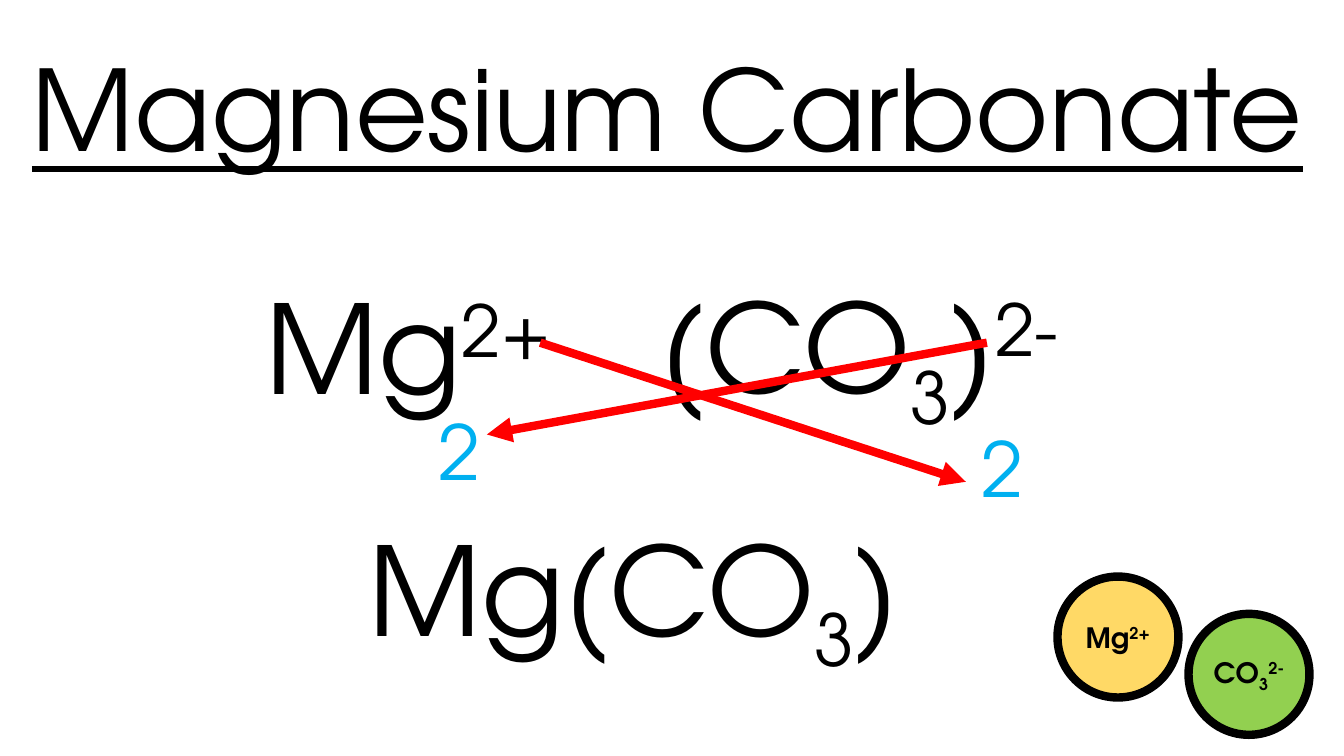
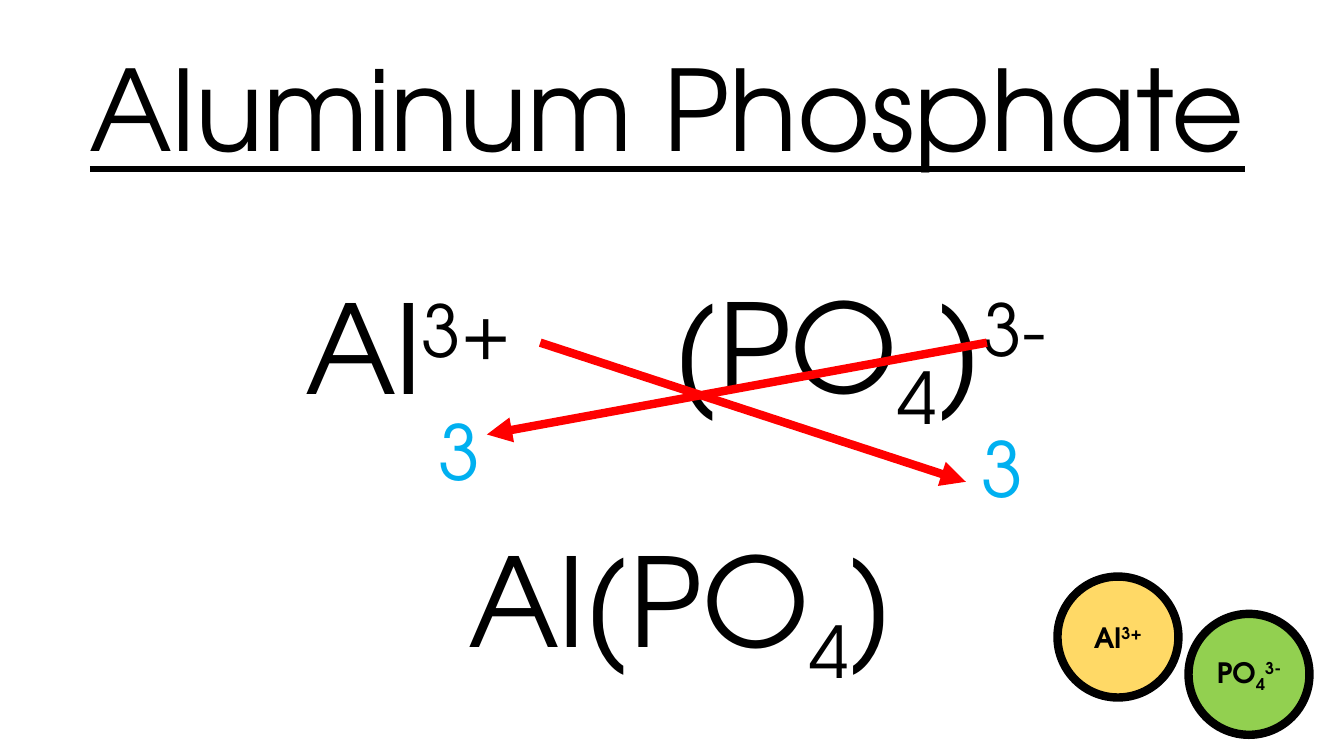
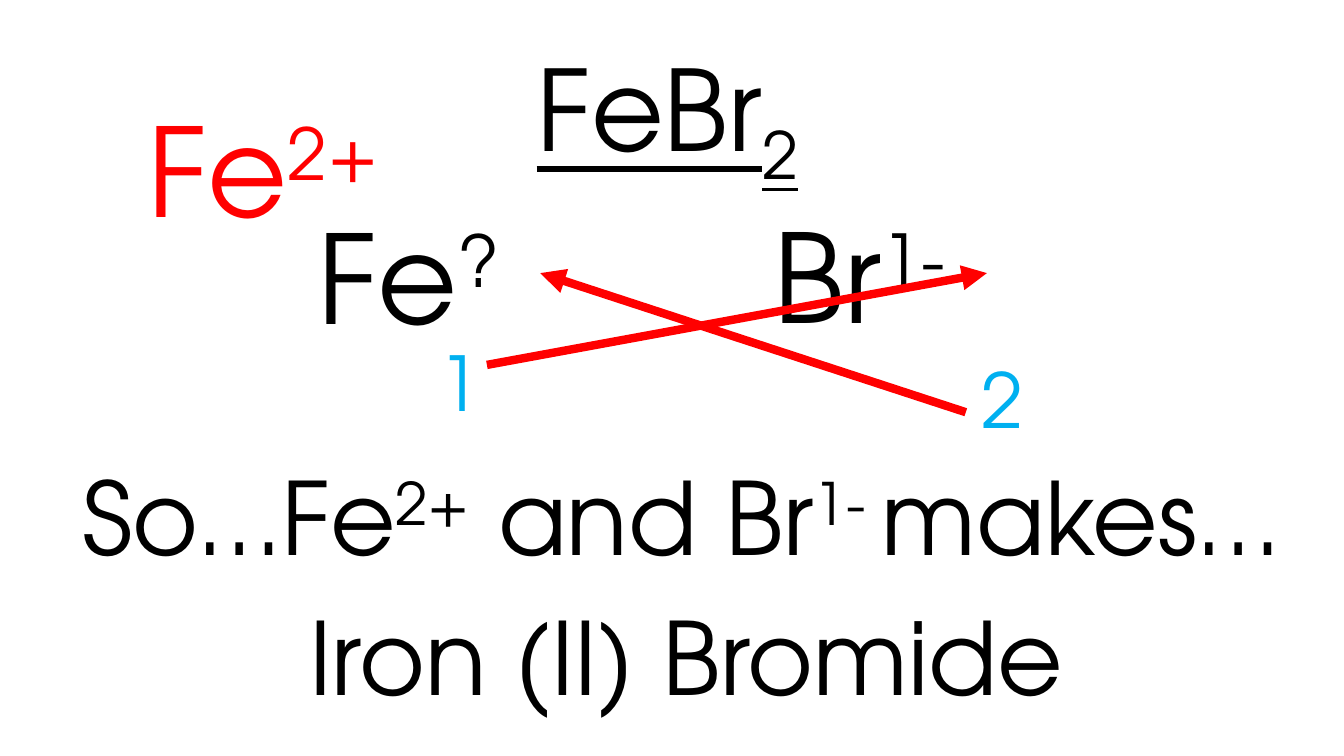
from lxml.etree import SubElement
from pptx import Presentation
from pptx.dml.color import RGBColor
from pptx.enum.shapes import MSO_CONNECTOR as CONN, MSO_SHAPE as SHAPE
from pptx.enum.text import MSO_ANCHOR as ANCHOR, MSO_AUTO_SIZE as AUTO, PP_ALIGN as ALIGN
from pptx.oxml.ns import qn
from pptx.util import Inches, Pt

FONT = "TeX Gyre Adventor"
COLORS = {"ink": "000000", "arrow": "FF0000", "count": "00B0F0",
          "cation": "FFD966", "anion": "92D050"}
SIZES = {"title": 80, "formula": 88, "sentence": 72, "count": 54, "ball": 20}
BASELINES = {"^": "30000", "_": "-25000"}
SLIDE_W, SLIDE_H = Inches(13.33), Inches(7.5)

# Boxes are left, top, width, height in percent of the slide
TITLE = (0.68, 4.53, 97.95, 19.33)
FORMULA_H = 21.07
SENTENCE_H = 17.47


def color(name):
    return RGBColor.from_string(COLORS[name])


def across(share):
    return round(SLIDE_W * share / 100)


def down(share):
    return round(SLIDE_H * share / 100)


def place(box):
    x, y, w, h = box
    return across(x), down(y), across(w), down(h)


def write(tf, text, size, ink="ink", bold=False, underline=False):
    """Centred formula text: ^ raises, _ lowers, | returns to the line."""
    p = tf.paragraphs[0]
    p.alignment = ALIGN.CENTER
    text = "|" + text
    for mark in "^_|":
        text = text.replace(mark, "\n" + mark)
    for piece in text.split("\n")[1:]:
        r = p.add_run()
        r.text = piece[1:]
        r.font.name, r.font.size = FONT, Pt(SIZES[size])
        r.font.bold, r.font.underline = bold, underline
        r.font.color.rgb = color(ink)
        if piece[0] in BASELINES:
            r._r.get_or_add_rPr().set("baseline", BASELINES[piece[0]])


def add_text(s, box, text, size, **style):
    tf = s.shapes.add_textbox(*place(box)).text_frame
    tf.word_wrap = True
    tf.auto_size = AUTO.SHAPE_TO_FIT_TEXT
    write(tf, text, size, **style)


def add_arrow(s, start, end):
    (x1, y1), (x2, y2) = start, end
    line = s.shapes.add_connector(CONN.STRAIGHT, across(x1), down(y1), across(x2), down(y2))
    line.line.color.rgb = color("arrow")
    line.line.width = Pt(6)
    SubElement(line.line._get_or_add_ln(), qn("a:tailEnd"), type="triangle")
    SubElement(line._element.spPr, qn("a:effectLst"))


def add_criss_cross(s, left, top, ions, counts, reverse=False):
    """Two ions whose charges cross over to become the counts below."""
    # Ions
    add_text(s, (left, top, 38.48, FORMULA_H), ions[0], "formula")
    add_text(s, (left + 36, top - 0.13, 33.53, FORMULA_H), ions[1], "formula")

    # Crossing arrows, from charge to count unless reversed
    for (x1, y1), (x2, y2) in (((29.02, 10.13), (60.68, 28.53)),
                               ((62.25, 10.13), (25.05, 22.27))):
        ends = [(left + x1, top + y1), (left + x2, top + y2)]
        add_arrow(s, *(reversed(ends) if reverse else ends))

    # Counts
    for count, dx, dy in zip(counts, (9.9, 50.33), (17.73, 20)):
        add_text(s, (left + dx, top + dy, 26.18, 13.47), count, "count", ink="count")


def add_ion_balls(s, left, top, labels):
    for i, (label, fill) in enumerate(zip(labels, ("cation", "anion"))):
        box = (left + 9.75 * i, top + 4.93 * i, 9, 16)
        sp = s.shapes.add_shape(SHAPE.OVAL, *place(box))
        sp.shadow.inherit = False
        sp.fill.solid()
        sp.fill.fore_color.rgb = color(fill)
        sp.line.color.rgb = color("ink")
        sp.line.width = Pt(6)
        tf = sp.text_frame
        tf.margin_left = tf.margin_right = 0
        tf.vertical_anchor = ANCHOR.MIDDLE
        write(tf, label, "ball", bold=True)


def new_slide(prs, title):
    s = prs.slides.add_slide(prs.slide_layouts[6])
    add_text(s, TITLE, title, "title", underline=True)
    return s


def naming_to_formula(prs, title, ions, counts, result, result_at, balls):
    s = new_slide(prs, title)
    add_criss_cross(s, 11.18, 35.2, ions, counts)
    add_text(s, (*result_at, 100, FORMULA_H), result, "formula")
    add_ion_balls(s, 78.68, 76.27, balls)


def formula_to_name(prs, title, ions, counts, answer, sentences):
    s = new_slide(prs, title)
    add_criss_cross(s, 11.18, 26, ions, counts, reverse=True)
    for text, left, top in sentences:
        add_text(s, (left, top, 100, SENTENCE_H), text, "sentence")
    add_text(s, (5.03, 11.87, 29.1, FORMULA_H), answer, "formula", ink="arrow")


def main():
    prs = Presentation()
    prs.slide_width, prs.slide_height = SLIDE_W, SLIDE_H
    naming_to_formula(prs, "Magnesium Carbonate", ("Mg^2+", "(CO_3|)^2-"), "22",
                      "Mg(CO_3|)", (-2.85, 67.2), ("Mg^2+", "CO_3^2-"))
    naming_to_formula(prs, "Aluminum Phosphate", ("Al^3+", "(PO_4|)^3-"), "33",
                      "Al(PO_4|)", (0.68, 68.67), ("Al^3+", "PO_4^3-"))
    formula_to_name(prs, "FeBr_2", ("Fe^?", "Br^1-"), "12", "Fe^2+",
                    (("So…Fe^2+| and Br^1- |makes…", 0.68, 59.47),
                     ("Iron (II) Bromide", 1.05, 78)))
    prs.save("out.pptx")


if __name__ == "__main__":
    main()
